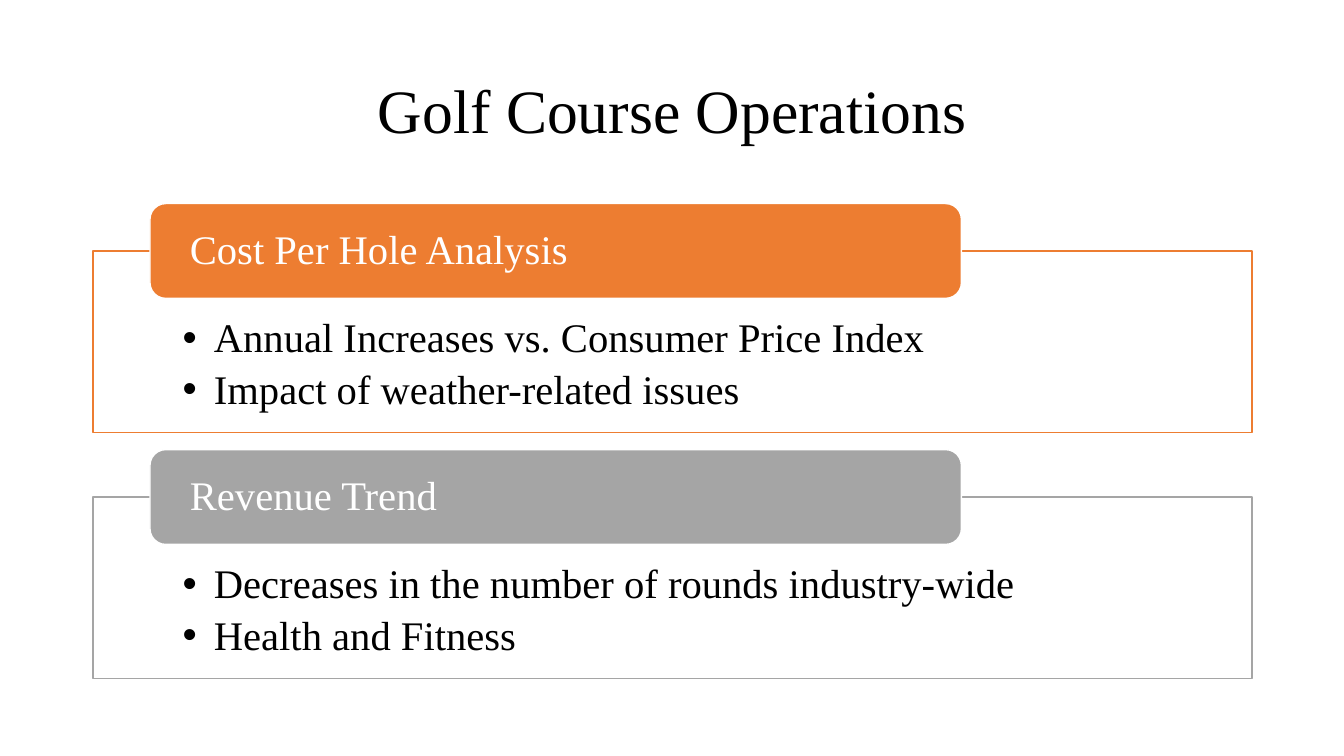
from pptx import Presentation
from pptx.dml.color import RGBColor
from pptx.enum import shapes, text
from pptx.util import Cm, Pt

BLACK = RGBColor(0x00, 0x00, 0x00)
WHITE = RGBColor(0xFF, 0xFF, 0xFF)
ORANGE = RGBColor(0xED, 0x7D, 0x31)
GRAY = RGBColor(0xA5, 0xA5, 0xA5)

LEFT, WIDTH = 2.34, 29.21
FIRST_TAB_TOP, SECTION_PITCH = 5.13, 6.2
TAB_HEIGHT = 2.39

SECTIONS = [
    ("Cost Per Hole Analysis", ORANGE,
     ["Annual Increases vs. Consumer Price Index", "Impact of weather-related issues"]),
    ("Revenue Trend", GRAY,
     ["Decreases in the number of rounds industry-wide", "Health and Fitness"]),
]


def place(sp, left, top, width, height):
    box = dict(left=left, top=top, width=width, height=height)
    for name, value in box.items():
        setattr(sp, name, Cm(value))


def write(sp, lines, size, color, align, frame, space_after=0):
    """Fill a shape with one paragraph per line; frame holds text frame settings."""
    tf = sp.text_frame
    tf.text = "\n".join(lines)
    frame = dict(word_wrap=True, auto_size=text.MSO_AUTO_SIZE.NONE, **frame)
    for name, value in frame.items():
        setattr(tf, name, value)
    for p in tf.paragraphs:
        p.alignment = align
        p.line_spacing = 0.9
        p.space_before, p.space_after = Pt(0), Pt(space_after)
        font = p.runs[0].font
        font.name, font.size = "Times New Roman", Pt(size)
        font.color.rgb = color


prs = Presentation()
prs.slide_width, prs.slide_height = Cm(33.87), Cm(19.05)
s = prs.slides.add_slide(prs.slide_layouts.get_by_name("Two Content"))
title, *bodies = s.placeholders

place(title, LEFT, 1.01, WIDTH, 3.68)
write(title, ["Golf Course Operations"], 44, BLACK, text.PP_ALIGN.CENTER,
      dict(vertical_anchor=text.MSO_ANCHOR.MIDDLE))

body_frame = dict(vertical_anchor=text.MSO_ANCHOR.TOP, margin_left=Cm(2.26),
                  margin_right=Cm(2.26), margin_top=Cm(1.68), margin_bottom=Cm(0.58))
tab_frame = dict(vertical_anchor=text.MSO_ANCHOR.MIDDLE, margin_left=Cm(0.89),
                 margin_right=Cm(0.89), margin_top=0, margin_bottom=0)

for i, (body, (heading, color, items)) in enumerate(zip(bodies, SECTIONS)):
    top = FIRST_TAB_TOP + i * SECTION_PITCH
    place(body, LEFT, top + TAB_HEIGHT / 2, WIDTH, 4.57)
    write(body, items, 29, BLACK, text.PP_ALIGN.LEFT, body_frame, space_after=5.5)
    for p in body.text_frame.paragraphs:
        pPr = p._p.get_or_add_pPr()
        pPr.set("marL", str(Cm(0.79)))
        pPr.set("indent", str(Cm(-0.79)))

    tab = s.shapes.add_shape(shapes.MSO_SHAPE.ROUNDED_RECTANGLE, Cm(3.78), Cm(top),
                             Cm(20.45), Cm(TAB_HEIGHT))
    tab.shadow.inherit = False
    write(tab, [heading], 29, WHITE, text.PP_ALIGN.LEFT, tab_frame)

    for sp, fill, line in [(body, WHITE, color), (tab, color, WHITE)]:
        sp.fill.solid()
        sp.fill.fore_color.rgb = fill
        sp.line.color.rgb = line
        sp.line.width = Pt(1)

prs.save("out.pptx")
